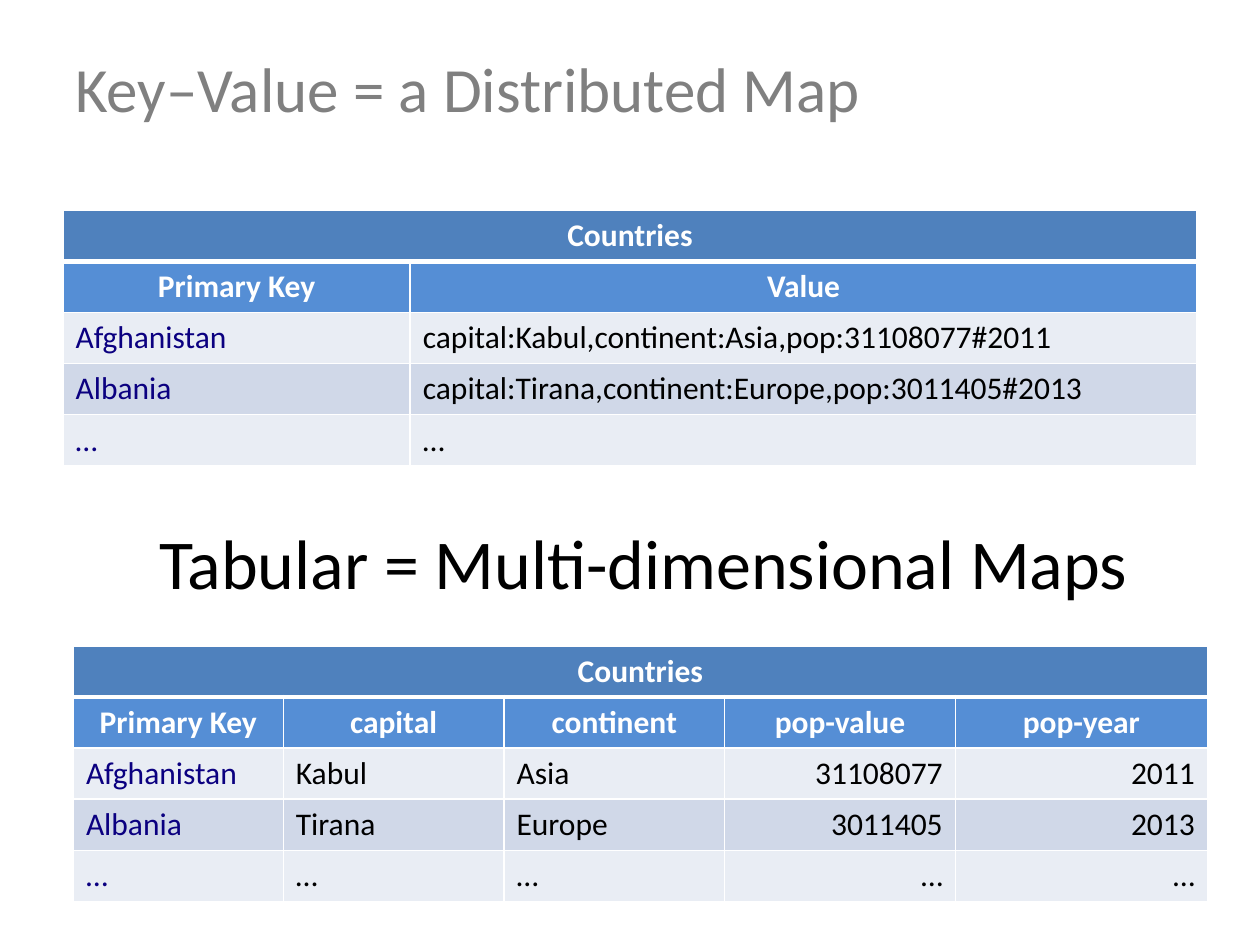
from lxml.etree import SubElement
from pptx import Presentation
from pptx.dml.color import RGBColor as RGB
from pptx.enum.text import MSO_ANCHOR as ANCHOR, PP_ALIGN as ALIGN
from pptx.oxml.ns import qn
from pptx.util import Cm, Pt

FONT = "Calibri"
COLORS = {
    "title": "808080", "text": "000000", "key": "0B0080", "white": "FFFFFF",
    "caption": "4F81BD", "header": "558ED5", "odd": "E9EDF4", "even": "D0D8E8",
}
HEADINGS = [
    ("Key–Value = a Distributed Map", (1.27, 0.77, 22.86, 1.98), 36, "title", ALIGN.LEFT),
    ("Tabular = Multi-dimensional Maps ", (1.7, 9.73, 22.86, 3.18), 40, "text", ALIGN.CENTER),
]
TABLES = [
    {
        "left": 1.27, "top": 4.24, "widths": [7, 15.86],
        "caption": "Countries", "header": ["Primary Key", "Value"], "numeric": [],
        "body": [
            ["Afghanistan", "capital:Kabul,continent:Asia,pop:31108077#2011"],
            ["Albania", "capital:Tirana,continent:Europe,pop:3011405#2013"],
            ["…", "…"],
        ],
    },
    {
        "left": 1.48, "top": 13.02, "widths": [4.23, 4.45, 4.45, 4.65, 5.08],
        "caption": "Countries",
        "header": ["Primary Key", "capital", "continent", "pop-value", "pop-year"],
        "numeric": [3, 4],
        "body": [
            ["Afghanistan", "Kabul", "Asia", "31108077", "2011"],
            ["Albania", "Tirana", "Europe", "3011405", "2013"],
            ["…", "…", "…", "…", "…"],
        ],
    },
]
ROW_HEIGHT = 1.03


def color(name):
    return RGB.from_string(COLORS[name])


def write(tf, text, size, ink, align, bold=False):
    p = tf.paragraphs[0]
    p.alignment = align
    r = p.add_run()
    r.text = text
    r.font.name, r.font.size, r.font.bold = FONT, Pt(size), bold
    r.font.color.rgb = color(ink)


def add_borders(cell, top, bottom):
    tc_pr = cell._tc.get_or_add_tcPr()
    for side, width in (("L", 1), ("R", 1), ("T", top), ("B", bottom)):
        ln = SubElement(tc_pr, qn(f"a:ln{side}"), w=str(Pt(width)))
        fill = SubElement(ln, qn("a:solidFill"))
        SubElement(fill, qn("a:srgbClr"), val=COLORS["white"])


def add_heading(slide, text, box, size, ink, align):
    tf = slide.shapes.add_textbox(*map(Cm, box)).text_frame
    tf.word_wrap = True
    tf.vertical_anchor = ANCHOR.MIDDLE
    write(tf, text, size, ink, align)


def add_data_table(slide, data):
    widths = data["widths"]
    rows = [[data["caption"]], data["header"], *data["body"]]
    table = slide.shapes.add_table(
        len(rows), len(widths), Cm(data["left"]), Cm(data["top"]),
        Cm(sum(widths)), Cm(ROW_HEIGHT * len(rows))).table
    for column, width in zip(table.columns, widths):
        column.width = Cm(width)
    table.cell(0, 0).merge(table.cell(0, len(widths) - 1))
    for i, row in enumerate(rows):
        table.rows[i].height = Cm(ROW_HEIGHT)
        for j, text in enumerate(row):
            cell = table.cell(i, j)
            add_borders(cell, 1, 3 if i == 0 else 1)
            is_head = i < 2
            if is_head:
                fill, ink, align = ("caption", "header")[i], "white", ALIGN.CENTER
            else:
                fill = "even" if i % 2 else "odd"
                ink = "text" if j else "key"
                align = ALIGN.RIGHT if j in data["numeric"] else ALIGN.LEFT
            cell.fill.solid()
            cell.fill.fore_color.rgb = color(fill)
            cell.vertical_anchor = ANCHOR.TOP if is_head else ANCHOR.MIDDLE
            write(cell.text_frame, text, 18, ink, align, is_head)


def main():
    prs = Presentation()
    prs.slide_width, prs.slide_height = Cm(25.4), Cm(19.05)
    slide = prs.slides.add_slide(prs.slide_layouts[6])
    for heading, data in zip(HEADINGS, TABLES):
        add_heading(slide, *heading)
        add_data_table(slide, data)
    prs.save("out.pptx")


if __name__ == "__main__":
    main()
